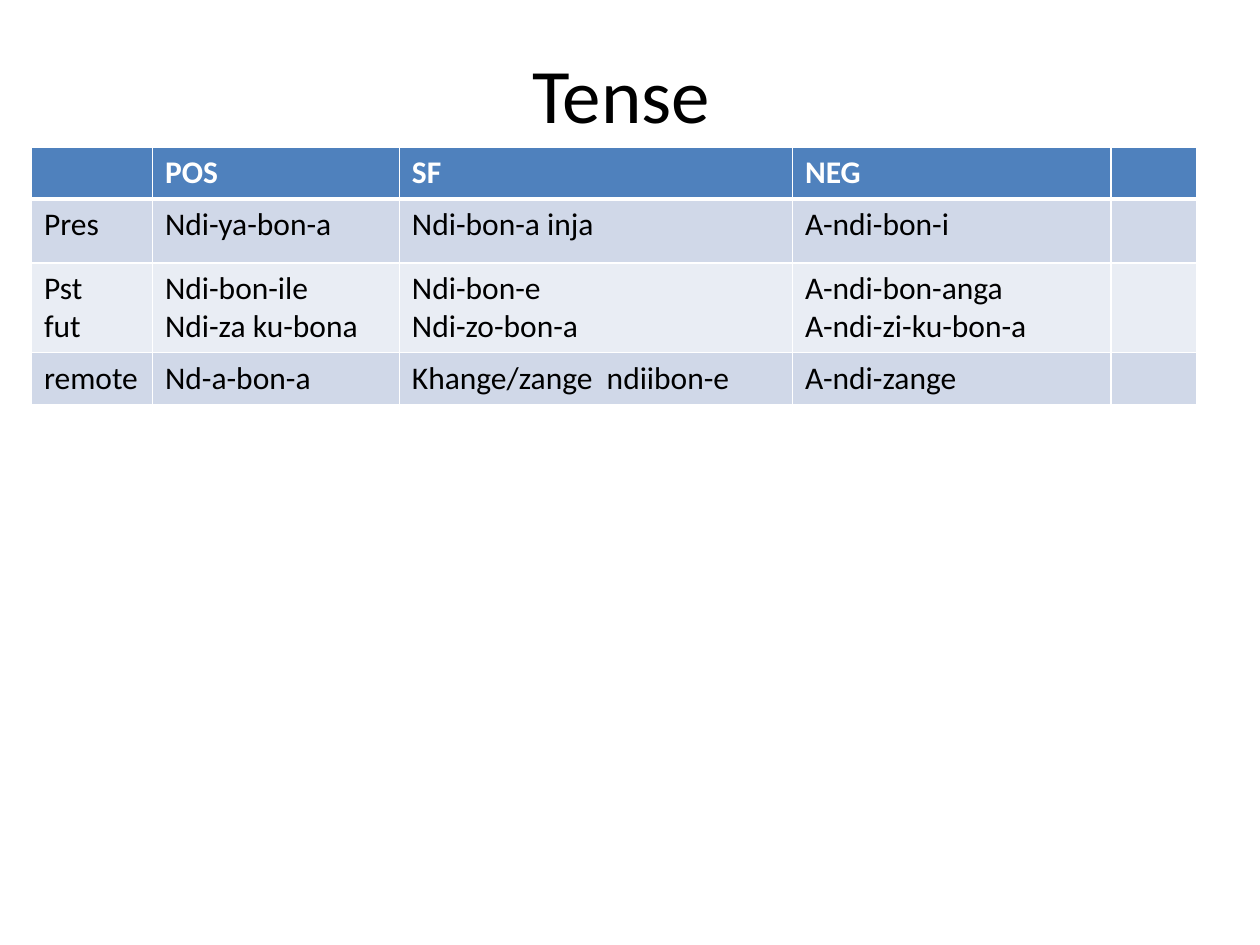
import dataclasses
import pptx
import pptx.dml.color
import pptx.enum.text
import pptx.oxml
import pptx.oxml.ns
import pptx.util
import lxml.etree


@dataclasses.dataclass(frozen=True)
class Theme:
    font: str = "Calibri"
    big: int = 44
    body: int = 18
    ink: str = "000000"
    white: str = "FFFFFF"
    head: str = "4F81BD"
    bands: tuple = ("D0D8E8", "E9EDF4")
    thin: int = 1
    thick: int = 3


THEME = Theme()
WIDE, HIGH = 10, 7.5
TITLE = (0.05, 0.04, 0.9, 0.116)
GRID = (0.025, 0.156, 0.925, 0.269)
COLS = (0.96, 1.96, 3.12, 2.53, 0.68)
ROWS = (0.41, 0.51, 0.69, 0.41)
TENSES = (
    ("", "POS", "SF", "NEG", ""),
    ("Pres", "Ndi-ya-bon-a", "Ndi-bon-a inja", "A-ndi-bon-i", ""),
    ("Pst\nfut", "Ndi-bon-ile\nNdi-za ku-bona", "Ndi-bon-e\nNdi-zo-bon-a",
     "A-ndi-bon-anga\nA-ndi-zi-ku-bon-a", ""),
    ("remote", "Nd-a-bon-a", "Khange/zange  ndiibon-e", "A-ndi-zange", ""),
)


def place(box):
    return [pptx.util.Inches(part * size)
            for part, size in zip(box, (WIDE, HIGH, WIDE, HIGH))]


def color(hue):
    return pptx.dml.color.RGBColor.from_string(hue)


def write(para, text, size, hue, bold=False):
    run = para.add_run()
    run.text = text
    run.font.name = THEME.font
    run.font.size = pptx.util.Pt(size)
    run.font.bold = bold
    run.font.color.rgb = color(hue)


def edge(cell, side, width):
    props = cell._tc.get_or_add_tcPr()
    line = lxml.etree.SubElement(props, pptx.oxml.ns.qn(f"a:ln{side}"),
                                 w=str(pptx.util.Pt(width)))
    fill = lxml.etree.SubElement(line, pptx.oxml.ns.qn("a:solidFill"))
    lxml.etree.SubElement(fill, pptx.oxml.ns.qn("a:srgbClr"), val=THEME.white)


def add_title(slide, box, text):
    title = slide.shapes.title
    title.left, title.top, title.width, title.height = place(box)
    frame = title.text_frame
    frame.vertical_anchor = pptx.enum.text.MSO_ANCHOR.MIDDLE
    para = frame.paragraphs[0]
    para.alignment = pptx.enum.text.PP_ALIGN.CENTER
    write(para, text, THEME.big, THEME.ink)


def fill_cell(cell, text, row):
    top = row == 0
    for side in "LRTB":
        rule = (row, side) in ((0, "B"), (1, "T"))
        edge(cell, side, THEME.thick if rule else THEME.thin)
    cell.fill.solid()
    cell.fill.fore_color.rgb = color(
        THEME.head if top else THEME.bands[(row - 1) % 2])
    frame = cell.text_frame
    if not text:
        frame.paragraphs[0].font.size = pptx.util.Pt(THEME.body)
        return
    for spot, line in enumerate(text.split("\n")):
        para = frame.add_paragraph() if spot else frame.paragraphs[0]
        write(para, line, THEME.body, THEME.white if top else THEME.ink, top)


def add_grid(slide, box, data):
    left, top, width, height = place(box)
    table = slide.shapes.add_table(
        len(ROWS), len(COLS), left, top, width, height).table
    for col, share in zip(table.columns, COLS):
        col.width = int(width * share / sum(COLS))
    for row, share in zip(table.rows, ROWS):
        row.height = int(height * share / sum(ROWS))
    for row, texts in enumerate(data):
        for col, text in enumerate(texts):
            fill_cell(table.cell(row, col), text, row)


def main():
    deck = pptx.Presentation()
    deck.slide_width = pptx.util.Inches(WIDE)
    deck.slide_height = pptx.util.Inches(HIGH)
    slide = deck.slides.add_slide(deck.slide_layouts.get_by_name("Title Only"))
    add_title(slide, TITLE, "Tense ")
    add_grid(slide, GRID, TENSES)
    deck.save("out.pptx")


if __name__ == "__main__":
    main()
